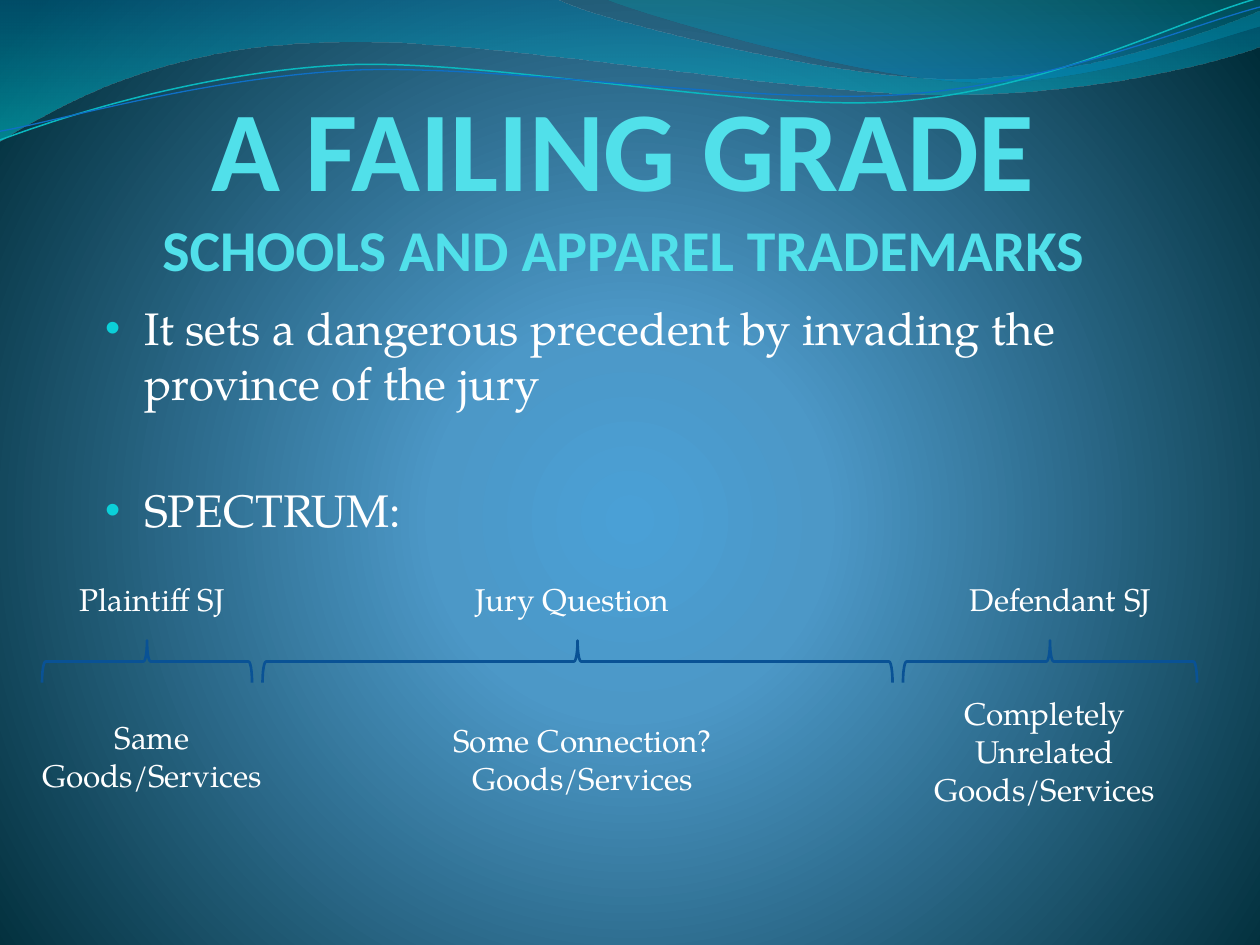
"""Builds the slide on school and apparel trademarks."""
from lxml import etree
from pptx import Presentation
from pptx.dml.color import RGBColor
from pptx.enum import shapes, text
from pptx.oxml import ns
from pptx.util import Pt

WHITE = RGBColor(0xFF, 0xFF, 0xFF)
AQUA = RGBColor(0x51, 0xE0, 0xEA)
DOT = RGBColor(0x0B, 0xD0, 0xD9)
NAVY = RGBColor(0x09, 0x52, 0x95)
TEAL = RGBColor(0x0A, 0xB8, 0xBF)
BLUE = RGBColor(0x0F, 0x6F, 0xC6)
CORE = RGBColor(0x4A, 0xA0, 0xD6)
MID = RGBColor(0x4C, 0x98, 0xC7)
EDGE = RGBColor(0x00, 0x2C, 0x38)
DEEP = RGBColor(0x00, 0x74, 0xA1)
CYAN = RGBColor(0x00, 0xC6, 0xCF)
SEA = RGBColor(0x00, 0xA1, 0xA9)
SKY = RGBColor(0x00, 0x8B, 0xBF)
SERIF = "TeX Gyre Pagella"
SANS = "Calibri"
GLOW = ('<a:path path="circle">'
        '<a:fillToRect l="10000" t="110000" r="10000" b="100000"/></a:path>')
DOWN = '<a:lin ang="5400000" scaled="1"/>'

WAVES = [
    ([(0, 0), (317, -1), (343, 12, 478, 45, 546, 45),
      (614, 45, 690, 19, 720, 6), (721, 26), (708, 32, 626, 55, 537, 54),
      (447, 54, 275, 20, 185, 24), (93, 26, 33, 60, -1, 81)],
     [(0, DEEP, 45), (100, CYAN, 55)]),
    ([(345, -1), (366, 8, 491, 45, 554, 47), (616, 50, 692, 23, 720, 15),
      (720, 0)],
     [(0, SEA, 30), (80, SKY, 45)]),
]
LINES = [
    ([(0, 80), (35, 67, 114, 41, 199, 37), (284, 34, 427, 64, 513, 58),
      (600, 51, 675, 11, 719, -1)], TEAL, 0.85),
    ([(0, 75), (34, 69, 118, 44, 204, 40), (290, 37, 430, 60, 516, 54),
      (602, 48, 678, 15, 720, 4)], BLUE, 0.75),
]
BRACES = [(24, 120), (150, 360), (516, 168)]
LABELS = [
    (36, 324, 102, 36, ["Plaintiff SJ"]),
    (546, 324, 120, 36, ["Defendant SJ"]),
    (252, 324, 150, 36, ["Jury Question"]),
    (12, 414, 150, 36, ["Same", "Goods/Services"]),
    (522, 390, 150, 78, ["Completely Unrelated", "Goods/Services"]),
    (234, 400.5, 198, 66, ["Some Connection? Goods/Services"]),
]
POINTS = [("It sets a dangerous precedent by invading the province of the jury", 5.2),
          ("SPECTRUM:", 41.5)]


def blend(fill, node, stops, tail):
    """Give the fill held by node a gradient of (place, colour, opacity)."""
    fill.solid()
    marks = "".join(
        f'<a:gs pos="{at * 1000}"><a:srgbClr val="{tint}">'
        f'<a:alpha val="{alpha * 1000}"/></a:srgbClr></a:gs>'
        for at, tint, alpha in stops)
    grad = etree.fromstring(
        f'<a:gradFill {ns.nsdecls("a")} rotWithShape="1">'
        f'<a:gsLst>{marks}</a:gsLst>{tail}</a:gradFill>')
    node.replace(node.find(ns.qn("a:solidFill")), grad)


def draw(slide, steps, close):
    """Add a freeform of lines (x, y) and cubic curves (three points)."""
    spots = [(Pt(step[i]), Pt(step[i + 1]))
             for step in steps for i in range(0, len(step), 2)]
    form = slide.shapes.build_freeform(*spots[0])
    form.add_line_segments(spots[1:], close=close)
    shape = form.convert_to_shape()
    shape.shadow.inherit = False
    sides = iter(shape.element.findall(".//" + ns.qn("a:lnTo")))
    for step in steps[1:]:
        side = next(sides)
        if len(step) == 6:
            side.tag = ns.qn("a:cubicBezTo")
            for _ in range(2):
                extra = next(sides)
                side.append(extra[0])
                extra.getparent().remove(extra)
    return shape


def wave(slide, steps, stops):
    """Add a filled, see-through wave."""
    shape = draw(slide, steps, True)
    blend(shape.fill, shape.element.spPr, stops, DOWN)
    shape.line.fill.background()


def stroke(shape, tint, width):
    """Leave a shape with its outline only."""
    shape.fill.background()
    shape.line.color.rgb = tint
    shape.line.width = Pt(width)


def brace(slide, left, span, top=366, depth=24):
    """Add a brace that lies flat over the given span."""
    shape = slide.shapes.add_shape(
        shapes.MSO_SHAPE.LEFT_BRACE, Pt(left + (span - depth) / 2),
        Pt(top + (depth - span) / 2), Pt(depth), Pt(span))
    shape.rotation = 90
    shape.shadow.inherit = False
    stroke(shape, NAVY, 1.5)


def box(slide, left, top, width, height, anchor):
    """Add a wrapping text box and return its frame."""
    frame = slide.shapes.add_textbox(
        Pt(left), Pt(top), Pt(width), Pt(height)).text_frame
    frame.word_wrap = True
    frame.vertical_anchor = anchor
    return frame


def style(font, size, name=SERIF, tint=WHITE, bold=False):
    """Set the look of a font."""
    font.size, font.name, font.bold = Pt(size), name, bold
    font.color.rgb = tint


def label(slide, left, top, width, height, rows):
    """Add a centred label with one paragraph a row."""
    frame = box(slide, left, top, width, height, text.MSO_ANCHOR.MIDDLE)
    frame.text = "\n".join(rows)
    for para in frame.paragraphs:
        para.alignment = text.PP_ALIGN.CENTER
        style(para.font, 18)


def title(slide):
    """Add the two-line title."""
    frame = box(slide, 24, 36, 666, 126, text.MSO_ANCHOR.BOTTOM)
    frame.margin_left = frame.margin_top = frame.margin_bottom = 0
    frame.margin_right = Pt(1.44)
    para = frame.paragraphs[0]
    para.alignment = text.PP_ALIGN.CENTER
    head = para.add_run()
    head.text = "A FAILING GRADE"
    style(head.font, 65, SANS, AQUA, True)
    para.add_line_break()
    sub = para.add_run()
    sub.text = "SCHOOLS AND APPAREL TRADEMARKS"
    style(sub.font, 33, SANS, AQUA, True)


def bullet(para):
    """Hang a coloured bullet in front of a paragraph."""
    props = para._p.get_or_add_pPr()
    props.set("marL", str(Pt(58.3)))
    props.set("indent", str(-Pt(22.3)))
    color = etree.SubElement(props, ns.qn("a:buClr"))
    etree.SubElement(color, ns.qn("a:srgbClr"), val=str(DOT))
    etree.SubElement(props, ns.qn("a:buSzPct"), val="95000")
    etree.SubElement(props, ns.qn("a:buFont"), typeface="Arial")
    etree.SubElement(props, ns.qn("a:buChar"), char="•")


def body(slide):
    """Add the bulleted points."""
    frame = box(slide, 24, 168, 666, 360, text.MSO_ANCHOR.TOP)
    frame.margin_left, frame.margin_right = 0, Pt(1.44)
    frame.text = "\n".join(line for line, _ in POINTS)
    for para, (_, gap) in zip(frame.paragraphs, POINTS):
        para.space_before = Pt(gap)
        bullet(para)
        style(para.font, 26)


def main():
    """Build and save the slide."""
    deck = Presentation()
    deck.slide_width, deck.slide_height = Pt(720), Pt(540)
    slide = deck.slides.add_slide(deck.slide_layouts[6])
    fill = slide.background.fill
    fill.solid()
    blend(fill, slide.element.find(".//" + ns.qn("p:bgPr")),
          [(0, CORE, 100), (25, MID, 100), (100, EDGE, 100)], GLOW)
    for steps, stops in WAVES:
        wave(slide, steps, stops)
    for steps, tint, width in LINES:
        stroke(draw(slide, steps, False), tint, width)
    body(slide)
    title(slide)
    for left, span in BRACES:
        brace(slide, left, span)
    for item in LABELS:
        label(slide, *item)
    deck.save("out.pptx")


if __name__ == "__main__":
    main()
